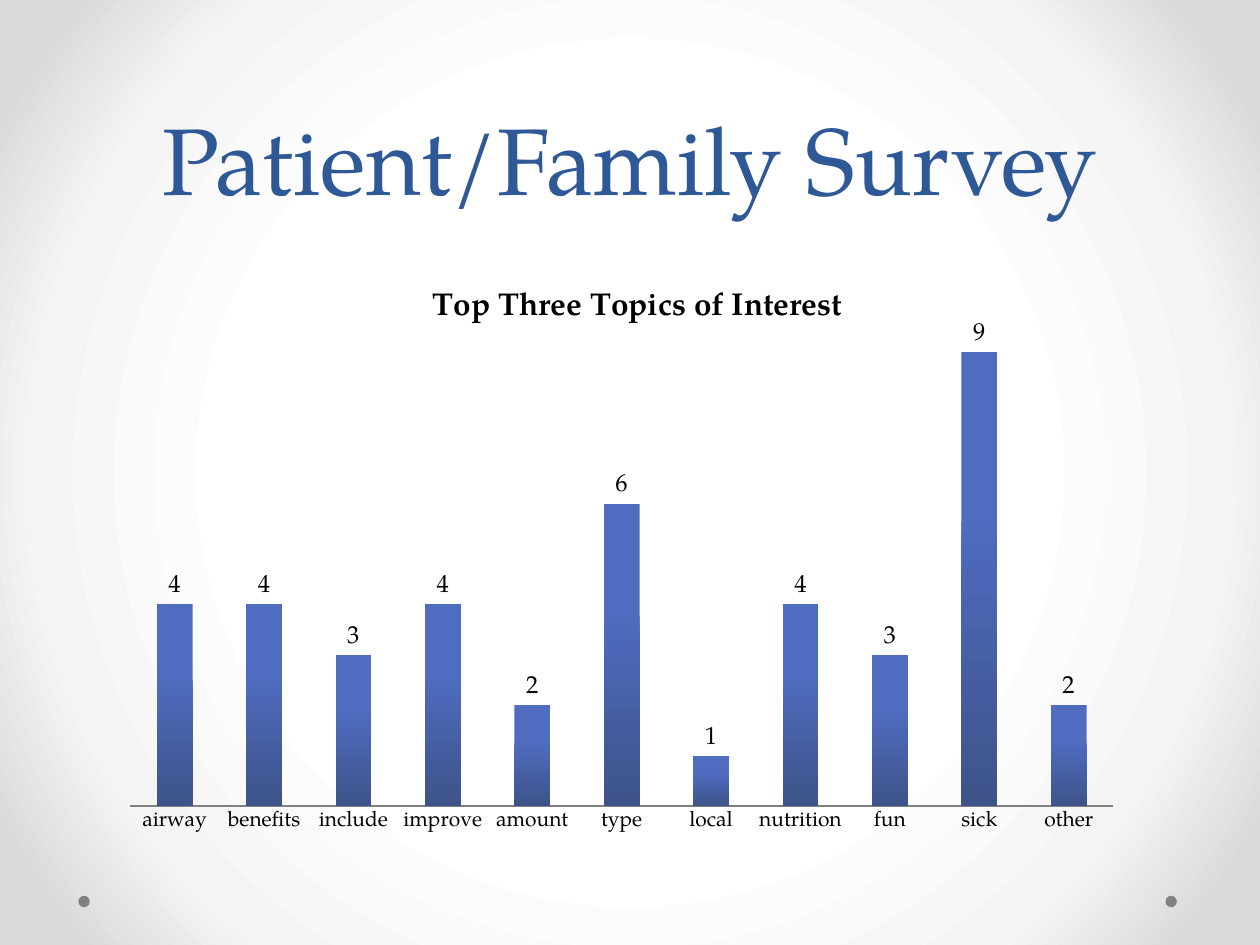
from copy import deepcopy
from dataclasses import dataclass

from lxml import etree
from pptx import Presentation
from pptx import util as u
from pptx.chart import data as chart_data
from pptx.dml import color
from pptx.enum import chart as charts, shapes, text
from pptx.oxml import ns

FONT = "TeX Gyre Pagella"
COLORS = {
    "title": "2F5897",
    "text": "000000",
    "dot": "808080",
    "axis": "808080",
    "bar_top": "4F6CC0",
    "bar_bottom": "3E5389",
    "center": "FFFFFF",
    "middle": "F4F4F4",
    "edge": "DADADA",
}


@dataclass(frozen=True)
class Dot:
    left: float
    top: float = 511.9
    size: float = 6.5


@dataclass(frozen=True)
class Topic:
    name: str
    votes: int


DOTS = [Dot(44.8), Dot(666)]
TOPICS = [
    Topic("airway", 4),
    Topic("benefits", 4),
    Topic("include", 3),
    Topic("improve", 4),
    Topic("amount", 2),
    Topic("type", 6),
    Topic("local", 1),
    Topic("nutrition", 4),
    Topic("fun", 3),
    Topic("sick", 9),
    Topic("other", 2),
]


def rgb(name: str) -> color.RGBColor:
    return color.RGBColor.from_string(COLORS[name])


def set_font(font, size: float, color_name: str = "text", bold: bool = False) -> None:
    font.name = FONT
    font.size = u.Pt(size)
    font.bold = bold
    font.color.rgb = rgb(color_name)


def set_stops(fill, stops: list[tuple[float, str]]) -> None:
    for stop, (position, name) in zip(fill.gradient_stops, stops):
        stop.position = position
        stop.color.rgb = rgb(name)


def paint_background(page) -> None:
    fill = page.background.fill
    fill.gradient()
    gradient = page.element.find(".//" + ns.qn("a:gradFill"))
    stop_list = gradient.find(ns.qn("a:gsLst"))
    stop_list.append(deepcopy(stop_list[0]))
    set_stops(fill, [(0.5, "center"), (0.76, "middle"), (0.92, "edge")])
    gradient.remove(gradient.find(ns.qn("a:lin")))
    circle = etree.SubElement(gradient, ns.qn("a:path"), {"path": "circle"})
    sides = {side: "50000" for side in "ltrb"}
    etree.SubElement(circle, ns.qn("a:fillToRect"), sides)


def draw_dot(page, dot: Dot) -> None:
    shape = page.shapes.add_shape(
        shapes.MSO_SHAPE.OVAL,
        u.Pt(dot.left), u.Pt(dot.top), u.Pt(dot.size), u.Pt(dot.size),
    )
    shape.shadow.inherit = False
    shape.fill.solid()
    shape.fill.fore_color.rgb = rgb("dot")
    shape.line.fill.background()


def draw_title(page, title: str) -> None:
    box = page.shapes.add_textbox(u.Pt(36), u.Pt(0), u.Pt(648), u.Pt(126))
    frame = box.text_frame
    frame.word_wrap = True
    frame.vertical_anchor = text.MSO_ANCHOR.BOTTOM
    para = frame.paragraphs[0]
    para.text = title
    para.alignment = text.PP_ALIGN.CENTER
    para.line_spacing = u.Pt(58)
    set_font(para.font, 54, "title")


def place(parent, index: int, **values: str) -> None:
    for old in parent.findall(ns.qn("c:layout")):
        parent.remove(old)
    layout = etree.Element(ns.qn("c:layout"))
    manual = etree.SubElement(layout, ns.qn("c:manualLayout"))
    for tag, value in values.items():
        etree.SubElement(manual, ns.qn(f"c:{tag}"), {"val": value})
    parent.insert(index, layout)


def draw_chart(page, title: str, topics: list[Topic]) -> None:
    data = chart_data.CategoryChartData(number_format="General")
    data.categories = [topic.name for topic in topics]
    data.add_series("Series 1", [topic.votes for topic in topics])
    chart = page.shapes.add_chart(
        charts.XL_CHART_TYPE.COLUMN_CLUSTERED,
        u.Pt(62.6), u.Pt(130.3), u.Pt(585.4), u.Pt(351.4), data,
    ).chart
    set_font(chart.font, 10)
    chart.has_legend = False

    chart.has_title = True
    para = chart.chart_title.text_frame.paragraphs[0]
    para.text = title
    set_font(para.font, 18, bold=True)
    place(chart.chart_title._element, 1, xMode="edge", yMode="edge", x="0.31", y="0.09")
    plot_area = chart._chartSpace.find(".//" + ns.qn("c:plotArea"))
    place(plot_area, 0, layoutTarget="inner", xMode="edge", yMode="edge",
          x="0.02", y="0.12", w="0.96", h="0.82")

    values = chart.value_axis
    values.visible = False
    values.has_major_gridlines = False
    values.minimum_scale = 0
    values.maximum_scale = 10

    categories = chart.category_axis
    categories.major_tick_mark = charts.XL_TICK_MARK.NONE
    categories.format.line.color.rgb = rgb("axis")
    categories.format.line.width = u.Pt(0.75)
    set_font(categories.tick_labels.font, 12)

    plot = chart.plots[0]
    plot.vary_by_categories = False
    plot.gap_width = 150
    plot.overlap = -25
    series = plot.series[0]
    fill = series.format.fill
    fill.gradient()
    fill.gradient_angle = 270
    set_stops(fill, [(0.35, "bar_top"), (1, "bar_bottom")])
    labels = series.data_labels
    labels.show_value = True
    labels.position = charts.XL_LABEL_POSITION.OUTSIDE_END
    set_font(labels.font, 14)


def main() -> None:
    deck = Presentation()
    deck.slide_width = u.Pt(720)
    deck.slide_height = u.Pt(540)
    page = deck.slides.add_slide(deck.slide_layouts[6])
    paint_background(page)
    for dot in DOTS:
        draw_dot(page, dot)
    draw_title(page, "Patient/Family Survey")
    draw_chart(page, "Top Three Topics of Interest", TOPICS)
    deck.save("out.pptx")


if __name__ == "__main__":
    main()
